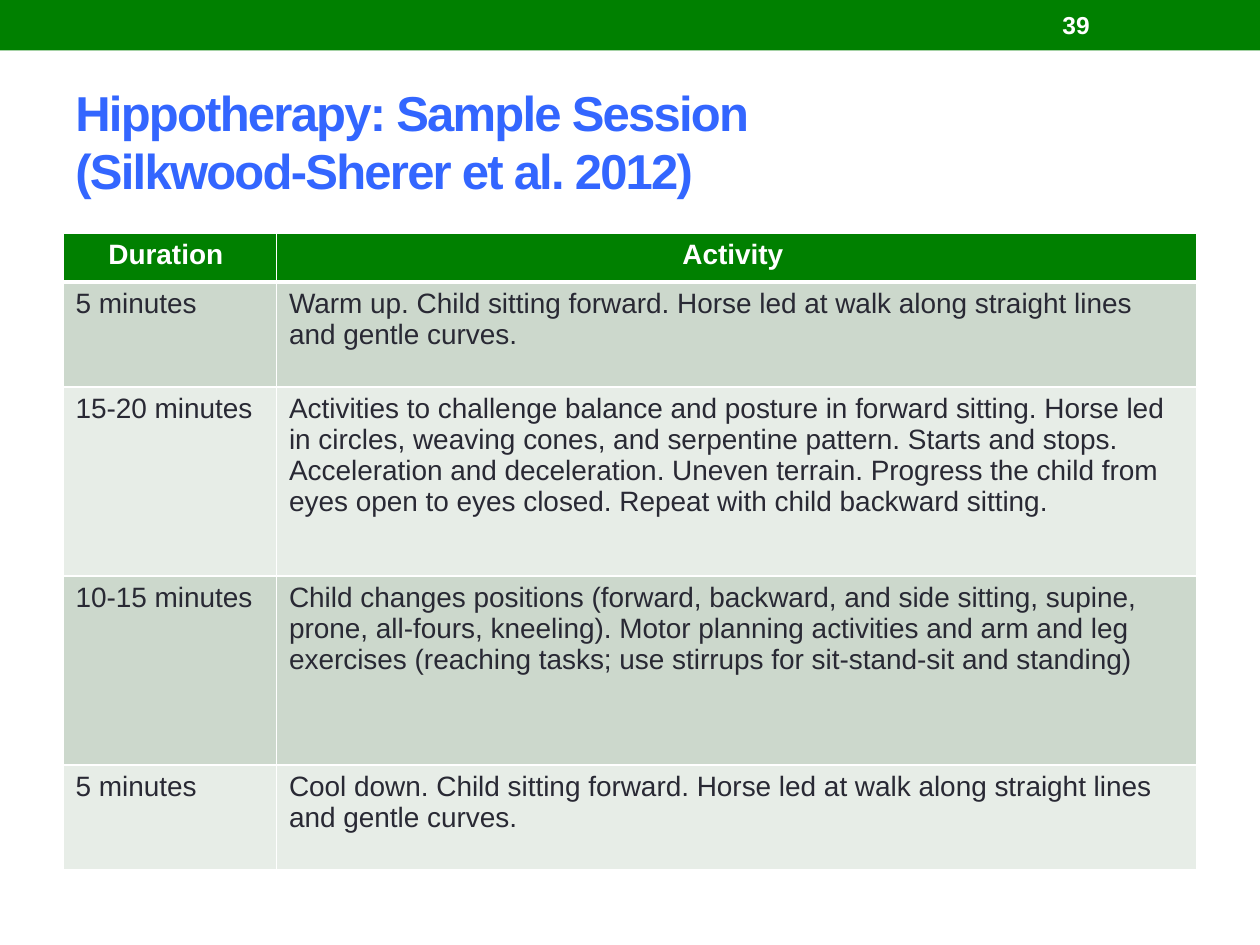
from lxml.etree import SubElement
from pptx import Presentation
from pptx.dml.color import RGBColor
from pptx.enum.shapes import MSO_SHAPE
from pptx.enum.text import MSO_ANCHOR, PP_ALIGN
from pptx.oxml.ns import qn
from pptx.util import Pt


def color(value):
    return RGBColor.from_string(value)


def style(paragraph, size, ink, bold):
    font = paragraph.font
    font.name, font.size, font.bold = "Arial", Pt(size), bold
    font.color.rgb = color(ink)


GREEN, WHITE = "008000", "FFFFFF"
sessions = [
    ("Duration ", "Activity "),
    ("5 minutes", "Warm up. Child sitting forward. Horse led at walk along straight lines and gentle curves."),
    ("15-20 minutes", "Activities to challenge balance and posture in forward sitting. Horse led in circles, "
     "weaving cones, and serpentine pattern. Starts and stops. Acceleration and deceleration. Uneven terrain. "
     "Progress the child from eyes open to eyes closed. Repeat with child backward sitting."),
    ("10-15 minutes", "Child changes positions (forward, backward, and side sitting, supine, prone, all-fours, "
     "kneeling). Motor planning activities and arm and leg exercises (reaching tasks; use stirrups for "
     "sit-stand-sit and standing)"),
    ("5 minutes", "Cool down. Child sitting forward. Horse led at walk along straight lines and gentle curves."),
]
row_heights = [28, 60, 108, 108, 60]
column_widths = [122, 526]

deck = Presentation()
deck.slide_width, deck.slide_height = Pt(720), Pt(540)
slide = deck.slides.add_slide(deck.slide_layouts[6])

banner = slide.shapes.add_shape(MSO_SHAPE.RECTANGLE, Pt(0), Pt(0), Pt(720), Pt(28.8))
banner.shadow.inherit = False
banner.fill.solid()
banner.fill.fore_color.rgb = color(GREEN)
banner.line.fill.background()

labels = [
    ("Hippotherapy: Sample Session\v(Silkwood-Sherer et al. 2012)", (36, 41.8, 648, 77.8), 28, "3366FF"),
    ("39", (600, 1.4, 84, 26), 14, WHITE),
]
for words, box, size, ink in labels:
    frame = slide.shapes.add_textbox(*map(Pt, box)).text_frame
    frame.word_wrap = True
    frame.vertical_anchor = MSO_ANCHOR.MIDDLE
    line = frame.paragraphs[0]
    line.text = words
    style(line, size, ink, True)
    if size == 28:
        line.line_spacing = Pt(33)
        for run in line.runs:
            run.font._element.set("spc", "-100")

schedule = slide.shapes.add_table(
    len(sessions), 2, Pt(36), Pt(133.2), Pt(sum(column_widths)), Pt(sum(row_heights))).table
schedule.horz_banding = False
for column, width in zip(schedule.columns, column_widths):
    column.width = Pt(width)

for r, (session, height) in enumerate(zip(sessions, row_heights)):
    schedule.rows[r].height = Pt(height)
    header = r == 0
    fill = GREEN if header else ("E7EDE7", "CCD8CC")[r % 2]
    for c, words in enumerate(session):
        cell = schedule.cell(r, c)
        cell.text = words
        entry = cell.text_frame.paragraphs[0]
        entry.alignment = PP_ALIGN.CENTER if header else PP_ALIGN.LEFT
        style(entry, 16, WHITE if header else "292934", header)
        properties = cell._tc.get_or_add_tcPr()
        for side in ("lnL", "lnR", "lnT", "lnB"):
            thick = (r, side) in ((0, "lnB"), (1, "lnT"))
            border = SubElement(properties, qn(f"a:{side}"), w=str(Pt(3 if thick else 1)))
            SubElement(SubElement(border, qn("a:solidFill")), qn("a:srgbClr"), val=WHITE)
        cell.fill.solid()
        cell.fill.fore_color.rgb = color(fill)

deck.save("out.pptx")
